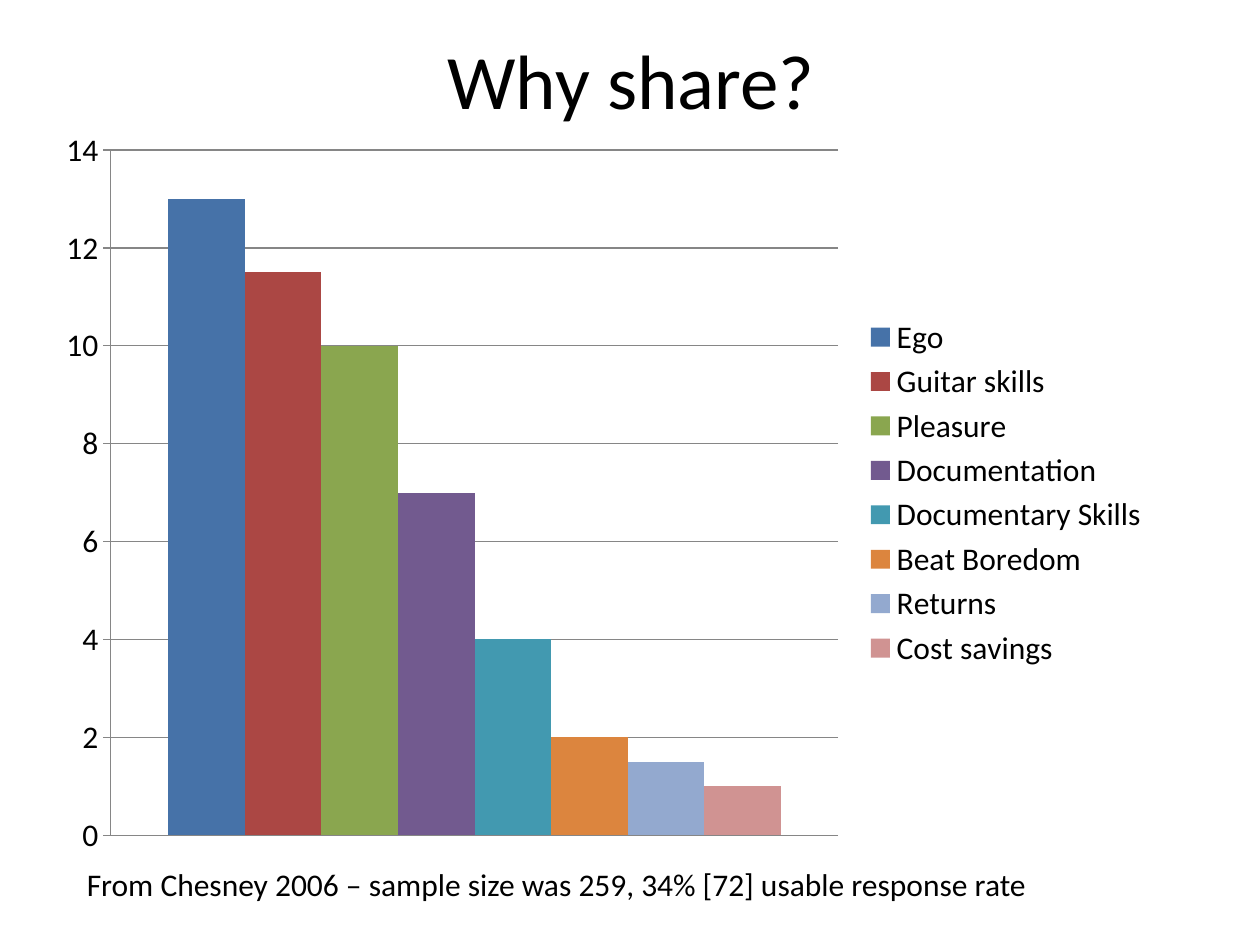
from pptx import Presentation
from pptx.chart.data import CategoryChartData
from pptx.dml.color import RGBColor
from pptx.enum.chart import XL_CHART_TYPE, XL_LEGEND_POSITION, XL_TICK_MARK
from pptx.enum.text import MSO_ANCHOR, MSO_AUTO_SIZE, PP_ALIGN
from pptx.util import Inches, Pt

COLUMNS = XL_CHART_TYPE.COLUMN_CLUSTERED
LEGEND_RIGHT = XL_LEGEND_POSITION.RIGHT
TICK_CROSS = XL_TICK_MARK.CROSS
TICK_NONE = XL_TICK_MARK.NONE
MIDDLE = MSO_ANCHOR.MIDDLE
FIT_SHAPE = MSO_AUTO_SIZE.SHAPE_TO_FIT_TEXT
CENTER = PP_ALIGN.CENTER
TITLE_ONLY = 5

FONT = "Calibri"
COLORS = {
    "text": "000000",
    "grid": "868686",
    "Ego": "4672A8",
    "Guitar skills": "AB4744",
    "Pleasure": "8AA64F",
    "Documentation": "725A8F",
    "Documentary Skills": "4299B0",
    "Beat Boredom": "DC853E",
    "Returns": "93A9CF",
    "Cost savings": "D09392",
}
REASONS = {
    "Ego": 13,
    "Guitar skills": 11.5,
    "Pleasure": 10,
    "Documentation": 7,
    "Documentary Skills": 4,
    "Beat Boredom": 2,
    "Returns": 1.5,
    "Cost savings": 1,
}


def color(name):
    return RGBColor.from_string(COLORS[name])


def set_values(target, values):
    for name, value in values.items():
        setattr(target, name, value)


def format_font(font, size):
    set_values(font, {"name": FONT, "size": Pt(size), "bold": False})
    font.color.rgb = color("text")


def format_line(line):
    line.color.rgb = color("grid")
    line.width = Pt(0.75)


def write_text(shape, text, size, frame_values, align=None):
    set_values(shape.text_frame, frame_values)
    para = shape.text_frame.paragraphs[0]
    para.alignment = align
    span = para.add_run()
    span.text = text
    format_font(span.font, size)


def add_title(page, text):
    title = page.shapes.title
    set_values(title, {"left": Inches(0.51), "top": Inches(0),
                       "width": Inches(9), "height": Inches(1.25)})
    write_text(title, text, 44, {"vertical_anchor": MIDDLE}, CENTER)


def add_reason_chart(page):
    data = CategoryChartData()
    data.categories = ["1"]
    for reason, share in REASONS.items():
        data.add_series(reason, [share])
    chart = page.shapes.add_chart(COLUMNS, Inches(0.35), Inches(0.92),
                                  Inches(8.87), Inches(5.98), data).chart
    format_font(chart.font, 18)
    set_values(chart, {"has_title": False, "has_legend": True})
    set_values(chart.legend, {"position": LEGEND_RIGHT, "include_in_layout": False})

    # Bars, one colour per reason
    plot = chart.plots[0]
    set_values(plot, {"gap_width": 150, "overlap": 0, "vary_by_categories": False})
    for series in plot.series:
        series.invert_if_negative = False
        series.format.fill.solid()
        series.format.fill.fore_color.rgb = color(series.name)

    # Axes and gridlines
    chart.category_axis.visible = False
    axis = chart.value_axis
    set_values(axis, {"minimum_scale": 0, "maximum_scale": 14, "major_unit": 2,
                      "has_major_gridlines": True,
                      "major_tick_mark": TICK_CROSS, "minor_tick_mark": TICK_NONE})
    format_line(axis.format.line)
    format_line(axis.major_gridlines.format.line)


def add_source_note(page, text):
    box = page.shapes.add_textbox(Inches(0.59), Inches(6.82), Inches(7.75), Inches(0.4))
    write_text(box, text, 18, {"word_wrap": False, "auto_size": FIT_SHAPE})


def main():
    deck = Presentation()
    set_values(deck, {"slide_width": Inches(10), "slide_height": Inches(7.5)})
    page = deck.slides.add_slide(deck.slide_layouts[TITLE_ONLY])
    add_title(page, "Why share?")
    add_reason_chart(page)
    add_source_note(page, "From Chesney 2006 – sample size was 259, 34% [72] usable response rate")
    deck.save("out.pptx")


if __name__ == "__main__":
    main()
